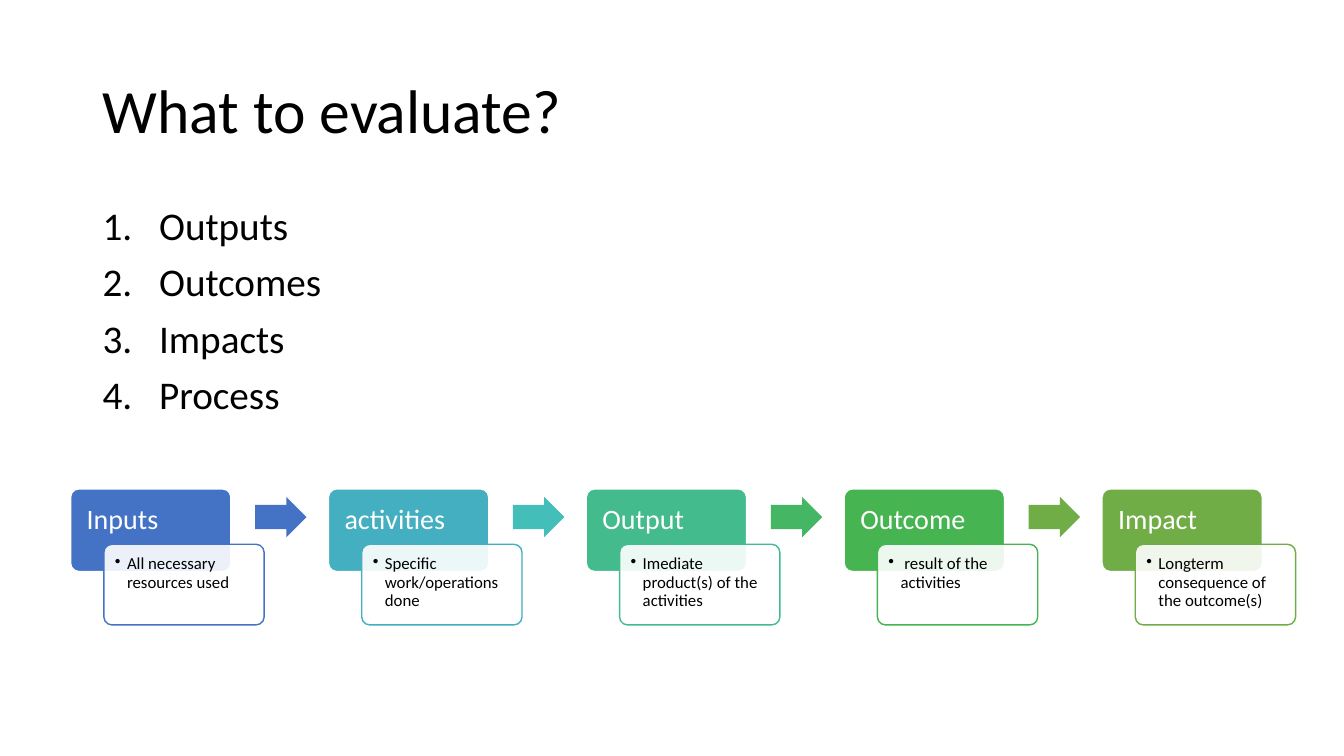
"""Build the "What to evaluate?" slide with its five-step results chain."""
from dataclasses import dataclass
from pptx import Presentation
from pptx.dml.color import RGBColor
from pptx.enum.shapes import MSO_SHAPE
from pptx.enum.text import MSO_ANCHOR
from pptx.oxml.xmlchemy import OxmlElement
from pptx.shapes.autoshape import Shape
from pptx.slide import Slide
from pptx.text.text import TextFrame, _Paragraph
from pptx.util import Inches, Pt

FONT = "Calibri"
HUES = {
    "black": "000000", "white": "FFFFFF", "blue": "4472C4",
    "cyan": "43AFC0", "teal": "43BEB9", "mint": "43BB8D",
    "jade": "45B664", "green": "45B451", "olive": "70AD47",
}
TOPICS = ["Outputs", "Outcomes", "Impacts", "Process"]
LEFT, TOP, PITCH = 0.7, 4.85, 10.23 / 4


@dataclass
class Box:
    left: float
    top: float
    width: float
    height: float


@dataclass
class Step:
    name: str
    note: str
    hue: str
    arrow: str = ""


STEPS = [
    Step("Inputs", "All necessary resources used", "blue", "blue"),
    Step("activities", "Specific work/operations done", "cyan", "teal"),
    Step("Output", "Imediate product(s) of the activities", "mint", "jade"),
    Step("Outcome", " result of the activities", "green", "olive"),
    Step("Impact", "Longterm consequence of the outcome(s)", "olive"),
]


def color(hue: str) -> RGBColor:
    """Return the named colour."""
    return RGBColor.from_string(HUES[hue])


def add_box(slide: Slide, box: Box, pads: tuple[float, float, float, float]) -> TextFrame:
    """Add a wrapping text box with left, top, right and bottom insets."""
    shape = slide.shapes.add_textbox(
        Inches(box.left), Inches(box.top), Inches(box.width), Inches(box.height))
    frame = shape.text_frame
    frame.word_wrap = True
    frame.margin_left, frame.margin_top, frame.margin_right, frame.margin_bottom = map(Inches, pads)
    return frame


def add_run(para: _Paragraph, text: str, size: int, hue: str = "black") -> None:
    """Write one run at the slide's line spacing."""
    para.line_spacing = 0.9
    run = para.add_run()
    run.text = text
    run.font.name = FONT
    run.font.size = Pt(size)
    run.font.color.rgb = color(hue)


def add_mark(para: _Paragraph, indent: float, tag: str, key: str, value: str) -> None:
    """Give a paragraph a hanging bullet or number."""
    props = para._p.get_or_add_pPr()
    props.set("marL", str(Inches(indent)))
    props.set("indent", str(-Inches(indent)))
    mark = OxmlElement(tag)
    mark.set(key, value)
    props.append(mark)


def add_form(slide: Slide, kind: MSO_SHAPE, box: Box, fill: str,
             edge: str, adjust: list[float]) -> Shape:
    """Add a filled preset shape, outlined when an edge colour is given."""
    form = slide.shapes.add_shape(
        kind, Inches(box.left), Inches(box.top), Inches(box.width), Inches(box.height))
    form.shadow.inherit = False
    for place, value in enumerate(adjust):
        form.adjustments[place] = value
    form.fill.solid()
    form.fill.fore_color.rgb = color(fill)
    if edge:
        form.line.color.rgb = color(edge)
        form.line.width = Pt(1)
    else:
        form.line.fill.background()
    return form


def add_step(slide: Slide, step: Step, left: float) -> None:
    """Draw a header card, its note card and the arrow to the next step."""
    card = MSO_SHAPE.ROUNDED_RECTANGLE
    add_form(slide, card, Box(left, TOP, 1.59, 0.82), step.hue, "white", [0.1])
    head = add_box(slide, Box(left, TOP, 1.59, 0.55), (0.16, 0.16, 0.16, 0.08))
    add_run(head.paragraphs[0], step.name, 20, "white")

    panel = add_form(slide, card, Box(left + 0.33, TOP + 0.55, 1.59, 0.8),
                     "white", step.hue, [0.1])
    alpha = OxmlElement("a:alpha")
    alpha.set("val", "90000")
    panel.fill._xPr.find(".//{*}srgbClr").append(alpha)
    note = add_box(slide, Box(left + 0.35, TOP + 0.57, 1.54, 0.76), (0.09,) * 4)
    para = note.paragraphs[0]
    add_run(para, step.note, 12)
    add_mark(para, 0.12, "a:buChar", "char", "•")

    if step.arrow:
        add_form(slide, MSO_SHAPE.RIGHT_ARROW, Box(left + 1.83, TOP + 0.08, 0.51, 0.4),
                 step.arrow, "", [0.6, 0.5])


def main() -> None:
    """Build and save the slide."""
    deck = Presentation()
    deck.slide_width, deck.slide_height = Inches(13.33), Inches(7.5)
    slide = deck.slides.add_slide(deck.slide_layouts[6])

    pads = (0.1, 0.05, 0.1, 0.05)
    title = add_box(slide, Box(0.92, 0.4, 11.5, 1.45), pads)
    title.vertical_anchor = MSO_ANCHOR.MIDDLE
    add_run(title.paragraphs[0], "What to evaluate?", 44)

    body = add_box(slide, Box(0.92, 2, 11.5, 4.76), pads)
    for order, topic in enumerate(TOPICS):
        para = body.add_paragraph() if order else body.paragraphs[0]
        add_run(para, topic, 28)
        para.space_before = Pt(10)
        add_mark(para, 0.56, "a:buAutoNum", "type", "arabicPeriod")

    for order, step in enumerate(STEPS):
        add_step(slide, step, LEFT + order * PITCH)
    deck.save("out.pptx")


if __name__ == "__main__":
    main()
